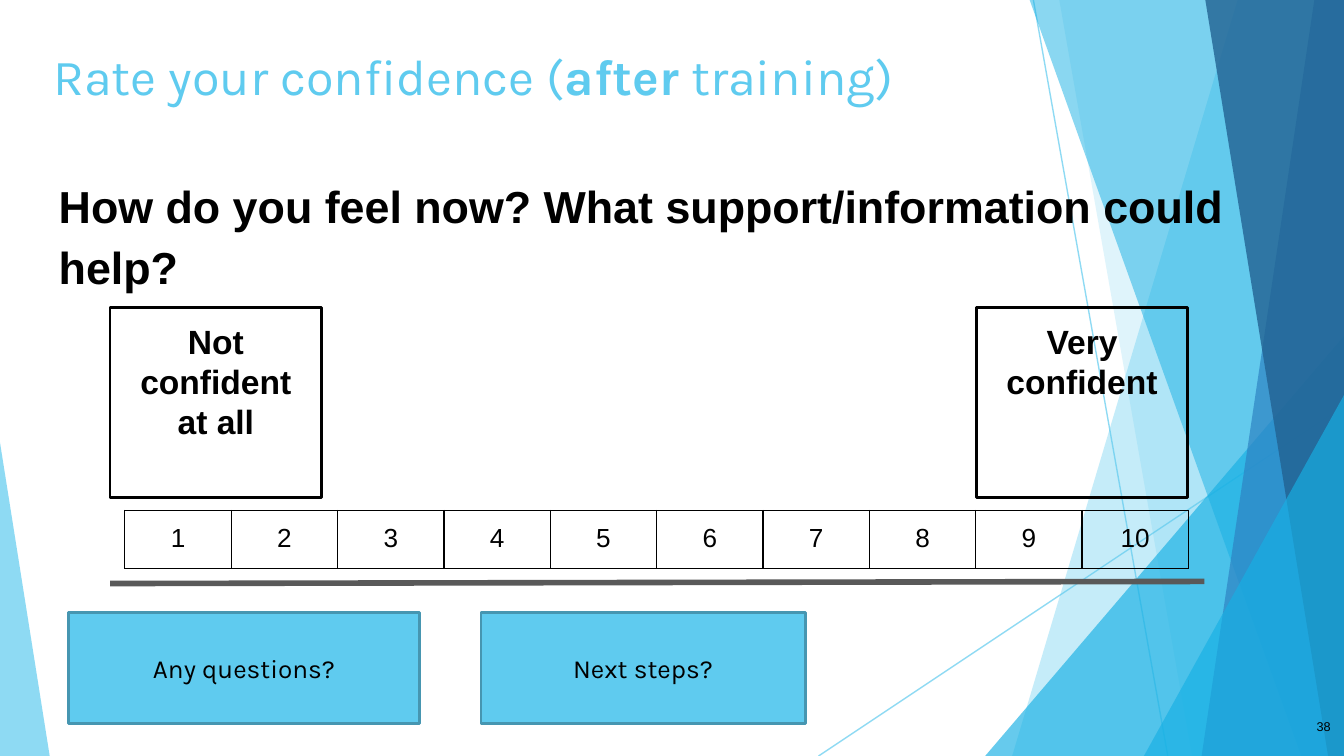
from lxml import etree
from pptx import Presentation, util as u
from pptx.dml.color import RGBColor
from pptx.enum import shapes, text
from pptx.oxml.ns import qn

SKY = RGBColor(0x5F, 0xCB, 0xEF)
CYAN = RGBColor(0x17, 0xB0, 0xE4)
BLUE = RGBColor(0x2E, 0x83, 0xC3)
NAVY = RGBColor(0x22, 0x62, 0x92)
TEAL = RGBColor(0x46, 0x96, 0xB1)
GREY = RGBColor(0x59, 0x59, 0x59)
BLACK = RGBColor(0, 0, 0)
WIDTH, HEIGHT = 25.4, 14.29
CENTER, RIGHT = text.PP_ALIGN.CENTER, text.PP_ALIGN.RIGHT
TOP, MIDDLE = text.MSO_ANCHOR.TOP, text.MSO_ANCHOR.MIDDLE


class SlideBuilder:
    inset = u.Cm(0.25)

    def __init__(self, slide):
        self.slide = slide
        self.shapes = slide.shapes

    def set_alpha(self, element, percent):
        for color in element.iter(qn("a:srgbClr")):
            etree.SubElement(color, qn("a:alpha")).set("val", str(percent * 1000))

    def style_font(self, font, size, name="Arial", color=BLACK, bold=False):
        font.name, font.size, font.bold = name, u.Pt(size), bold
        font.color.rgb = color

    def fill_text(self, shape, runs, size, name="Arial", color=BLACK, align=None,
                  anchor=TOP, spacing=None):
        """Fill a shape with one paragraph of (wording, bold) runs."""
        frame = shape.text_frame
        frame.word_wrap, frame.vertical_anchor = True, anchor
        frame.margin_left = frame.margin_right = self.inset
        frame.margin_top = frame.margin_bottom = self.inset
        paragraph = frame.paragraphs[0]
        paragraph.alignment, paragraph.line_spacing = align, spacing
        for wording, bold in runs:
            run = paragraph.add_run()
            run.text = wording
            self.style_font(run.font, size, name, color, bold)

    def line(self, x1, y1, x2, y2, color, width, alpha=100):
        line = self.shapes.add_connector(
            shapes.MSO_CONNECTOR.STRAIGHT, u.Cm(x1), u.Cm(y1), u.Cm(x2), u.Cm(y2))
        line.line.color.rgb, line.line.width = color, u.Pt(width)
        properties = line._element.spPr
        etree.SubElement(properties, qn("a:effectLst"))
        if alpha < 100:
            self.set_alpha(properties, alpha)

    def paint_facet(self, shape, color, alpha):
        shape.shadow.inherit = False
        shape.fill.solid()
        shape.fill.fore_color.rgb = color
        shape.line.fill.background()
        self.set_alpha(shape._element.spPr, alpha)

    def facet(self, top_x, bottom_x, color, alpha):
        """A full-height band from a slanted left edge to the slide's right."""
        outline = self.shapes.build_freeform(u.Cm(top_x), 0)
        corners = [(WIDTH, 0), (WIDTH, HEIGHT), (bottom_x, HEIGHT)]
        outline.add_line_segments([(u.Cm(x), u.Cm(y)) for x, y in corners])
        self.paint_facet(outline.convert_to_shape(), color, alpha)

    def corner(self, left, top, width, apex, color, alpha):
        """A right triangle that stands on the bottom edge."""
        triangle = self.shapes.add_shape(
            shapes.MSO_SHAPE.ISOSCELES_TRIANGLE,
            u.Cm(left), u.Cm(top), u.Cm(width), u.Cm(HEIGHT - top))
        triangle.adjustments[0] = apex
        self.paint_facet(triangle, color, alpha)

    def textbox(self, left, top, width, height, runs, size, **style):
        box = self.shapes.add_textbox(
            u.Cm(left), u.Cm(top), u.Cm(width), u.Cm(height))
        self.fill_text(box, runs, size, **style)

    def box(self, left, top, width, height, runs, size, outline, fill=None, **style):
        box = self.shapes.add_shape(
            shapes.MSO_SHAPE.RECTANGLE,
            u.Cm(left), u.Cm(top), u.Cm(width), u.Cm(height))
        box.shadow.inherit = False
        if fill is None:
            box.fill.background()
        else:
            box.fill.solid()
            box.fill.fore_color.rgb = fill
        box.line.color.rgb, box.line.width = outline, u.Pt(1.5)
        self.fill_text(box, runs, size, align=CENTER, **style)

    def border(self, cell):
        properties = cell._tc.get_or_add_tcPr()
        for position, side in enumerate(("a:lnL", "a:lnR", "a:lnT", "a:lnB")):
            edge = etree.Element(qn(side), w=str(u.Pt(0.75)))
            fill = etree.SubElement(edge, qn("a:solidFill"))
            etree.SubElement(fill, qn("a:srgbClr"), val=str(BLACK))
            properties.insert(position, edge)

    def scale(self, left, top, width, height, values):
        table = self.shapes.add_table(
            1, len(values), u.Cm(left), u.Cm(top), u.Cm(width), u.Cm(height)).table
        table.first_row = table.horz_banding = False
        for cell, value in zip(table.iter_cells(), values):
            cell.text = str(value)
            cell.margin_left = cell.margin_right = self.inset
            cell.margin_top = cell.margin_bottom = self.inset
            paragraph = cell.text_frame.paragraphs[0]
            paragraph.alignment = CENTER
            self.style_font(paragraph.runs[0].font, 14)
            cell.fill.background()
            self.border(cell)


def main():
    deck = Presentation()
    deck.slide_width, deck.slide_height = u.Cm(WIDTH), u.Cm(HEIGHT)
    page = SlideBuilder(deck.slides.add_slide(deck.slide_layouts[6]))

    # Faceted backdrop
    page.line(19.53, 0, 22.07, HEIGHT, SKY, 0.75, 70)
    page.line(WIDTH, 7.67, 15.47, HEIGHT, SKY, 0.75, 70)
    page.facet(23.39, 19.13, SKY, 36)
    page.facet(20.02, 22.53, SKY, 20)
    page.corner(18.62, 6.35, 6.78, 1, CYAN, 66)
    page.facet(19.46, 24.59, CYAN, 50)
    page.facet(24.84, 22.71, BLUE, 70)
    page.facet(22.78, 25.1, NAVY, 80)
    page.corner(21.62, 7.47, 3.78, 1, CYAN, 66)
    page.corner(0, 8.36, 0.94, 0, SKY, 70)

    # Title, slide number and question
    title = [("Rate your confidence (", False), ("after", True), (" training)", False)]
    page.textbox(0.76, 0.61, 23.77, 1.6, title, 27, name="Karla", color=SKY)
    page.textbox(23.88, 13.18, 1.52, 1.09, [("38", False)], 6.8,
                 align=RIGHT, anchor=MIDDLE)
    question = "How do you feel now? What support/information could help?"
    page.textbox(0.86, 2.97, 23.67, 9.73, [(question, True)], 24, spacing=1.15)

    # Confidence scale with its two ends
    page.line(2.08, 11.03, 22.76, 10.99, GREY, 3)
    for left, label in ((2.08, "Not confident at all"), (18.45, "Very confident")):
        page.box(left, 5.81, 4, 3.59, [(label, True)], 18, BLACK)
    page.scale(2.36, 9.65, 20.1, 1.07, range(1, 11))

    # Closing prompts
    for left, width, prompt in ((1.3, 6.63, "Any questions?"), (9.09, 6.13, "Next steps?")):
        page.box(left, 11.58, width, 2.1, [(prompt, False)], 14, TEAL, SKY,
                 name="Karla", anchor=MIDDLE)

    deck.save("out.pptx")


if __name__ == "__main__":
    main()
